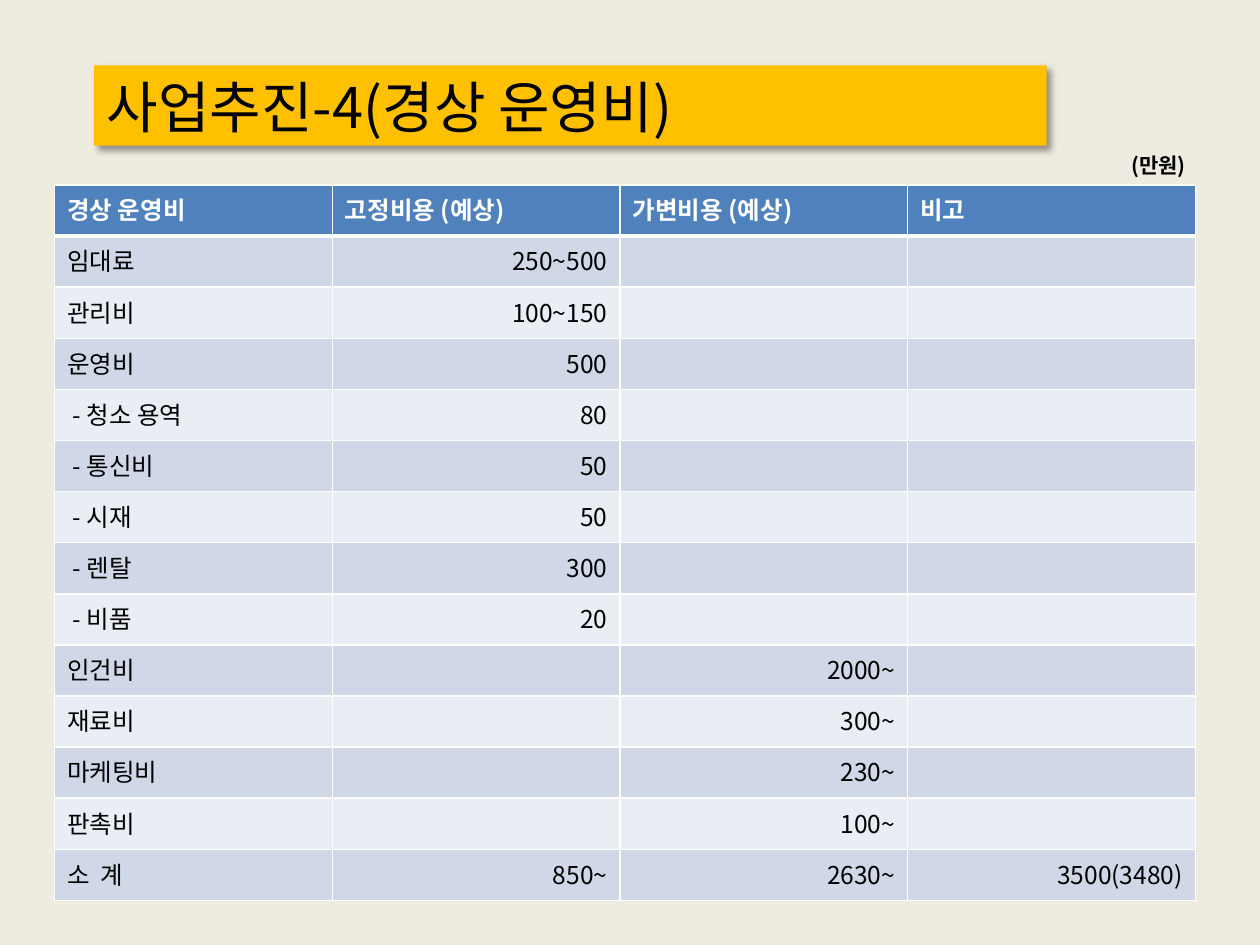
from dataclasses import dataclass

from lxml import etree
from pptx import Presentation
from pptx.dml.color import RGBColor
from pptx.enum.shapes import MSO_SHAPE
from pptx.enum.text import MSO_AUTO_SIZE, PP_ALIGN
from pptx.oxml.ns import qn
from pptx.util import Cm, Pt

RECTANGLE = MSO_SHAPE.RECTANGLE
GROW = MSO_AUTO_SIZE.SHAPE_TO_FIT_TEXT
LEFT, RIGHT = PP_ALIGN.LEFT, PP_ALIGN.RIGHT


@dataclass(frozen=True)
class Theme:
    font: str = "Noto Sans CJK KR"
    background: str = "EEECE1"
    banner: str = "FFC000"
    header: str = "4F81BD"
    bands: tuple[str, str] = ("D0D8E8", "E9EDF4")
    dark: str = "000000"
    light: str = "FFFFFF"
    title_size: int = 32
    table_size: int = 14
    unit_size: int = 12
    thin: int = 1
    thick: int = 3


@dataclass(frozen=True)
class CostRow:
    item: str
    fixed: str = ""
    variable: str = ""
    note: str = ""

    def values(self) -> tuple[str, ...]:
        return self.item, self.fixed, self.variable, self.note


THEME = Theme()
HEADER = CostRow("경상 운영비", "고정비용 (예상)", "가변비용 (예상)", "비고")
COSTS = [
    CostRow("임대료", "250~500"),
    CostRow("관리비", "100~150"),
    CostRow("운영비", "500"),
    CostRow(" - 청소 용역", "80"),
    CostRow(" - 통신비", "50"),
    CostRow(" - 시재", "50"),
    CostRow(" - 렌탈", "300"),
    CostRow(" - 비품", "20"),
    CostRow("인건비", variable="2000~"),
    CostRow("재료비", variable="300~"),
    CostRow("마케팅비", variable="230~"),
    CostRow("판촉비", variable="100~"),
    CostRow("소  계", "850~", "2630~", "3500(3480)"),
]
COLUMN_WIDTHS = (5.6, 5.8, 5.8, 5.8)
ROW_HEIGHT = 1.03


def write(paragraph, text: str, size: int, color: str, bold: bool = False, align=LEFT) -> None:
    paragraph.alignment = align
    run = paragraph.add_run()
    run.text = text
    run.font.name = THEME.font
    run.font.size = Pt(size)
    run.font.bold = bold
    run.font.color.rgb = RGBColor.from_string(color)
    etree.SubElement(run.font._element, qn("a:ea"), typeface=THEME.font)


def add_shadow(shape) -> None:
    effects = shape._element.spPr.find(qn("a:effectLst"))
    shadow = etree.SubElement(
        effects, qn("a:outerShdw"), blurRad=str(Pt(4)), dist=str(Pt(3)),
        dir="2700000", algn="tl", rotWithShape="0",
    )
    color = etree.SubElement(shadow, qn("a:srgbClr"), val=THEME.dark)
    etree.SubElement(color, qn("a:alpha"), val="40000")


def add_title(slide) -> None:
    shape = slide.shapes.add_shape(RECTANGLE, Cm(1.9), Cm(1.32), Cm(19.2), Cm(1.62))
    shape.shadow.inherit = False
    add_shadow(shape)
    shape.fill.solid()
    shape.fill.fore_color.rgb = RGBColor.from_string(THEME.banner)
    shape.line.fill.background()
    frame = shape.text_frame
    frame.word_wrap = True
    frame.auto_size = GROW
    write(frame.paragraphs[0], "사업추진-4(경상 운영비)", THEME.title_size, THEME.dark)


def add_unit_label(slide) -> None:
    frame = slide.shapes.add_textbox(Cm(21.95), Cm(2.95), Cm(2.2), Cm(0.77)).text_frame
    frame.word_wrap = True
    frame.auto_size = GROW
    write(frame.paragraphs[0], "(만원)", THEME.unit_size, THEME.dark, True, RIGHT)


def set_borders(cell, top: int, bottom: int) -> None:
    properties = cell._tc.get_or_add_tcPr()
    widths = {"lnL": THEME.thin, "lnR": THEME.thin, "lnT": top, "lnB": bottom}
    for position, (side, width) in enumerate(widths.items()):
        line = etree.Element(qn(f"a:{side}"), w=str(Pt(width)))
        fill = etree.SubElement(line, qn("a:solidFill"))
        etree.SubElement(fill, qn("a:srgbClr"), val=THEME.light)
        properties.insert(position, line)


def fill_cell(cell, text: str, row: int, column: int) -> None:
    is_header = row == 0
    background = THEME.header if is_header else THEME.bands[(row - 1) % 2]
    cell.fill.solid()
    cell.fill.fore_color.rgb = RGBColor.from_string(background)
    set_borders(
        cell,
        THEME.thick if row == 1 else THEME.thin,
        THEME.thick if is_header else THEME.thin,
    )
    paragraph = cell.text_frame.paragraphs[0]
    if text:
        color = THEME.light if is_header else THEME.dark
        align = LEFT if is_header or column == 0 else RIGHT
        write(paragraph, text, THEME.table_size, color, is_header, align)
    else:
        etree.SubElement(paragraph._p, qn("a:endParaRPr"), sz=str(THEME.table_size * 100))


def add_cost_table(slide) -> None:
    rows = [HEADER, *COSTS]
    table = slide.shapes.add_table(
        len(rows), len(COLUMN_WIDTHS), Cm(1.1), Cm(3.73),
        Cm(sum(COLUMN_WIDTHS)), Cm(ROW_HEIGHT * len(rows)),
    ).table
    for column, width in zip(table.columns, COLUMN_WIDTHS):
        column.width = Cm(width)
    for row_index, cost in enumerate(rows):
        table.rows[row_index].height = Cm(ROW_HEIGHT)
        for column_index, text in enumerate(cost.values()):
            fill_cell(table.cell(row_index, column_index), text, row_index, column_index)


def main() -> None:
    """Build the operating cost slide and save it."""
    presentation = Presentation()
    presentation.slide_width, presentation.slide_height = Cm(25.4), Cm(19.05)
    slide = presentation.slides.add_slide(presentation.slide_layouts[6])
    slide.background.fill.solid()
    slide.background.fill.fore_color.rgb = RGBColor.from_string(THEME.background)
    add_title(slide)
    add_cost_table(slide)
    add_unit_label(slide)
    presentation.save("out.pptx")


if __name__ == "__main__":
    main()
